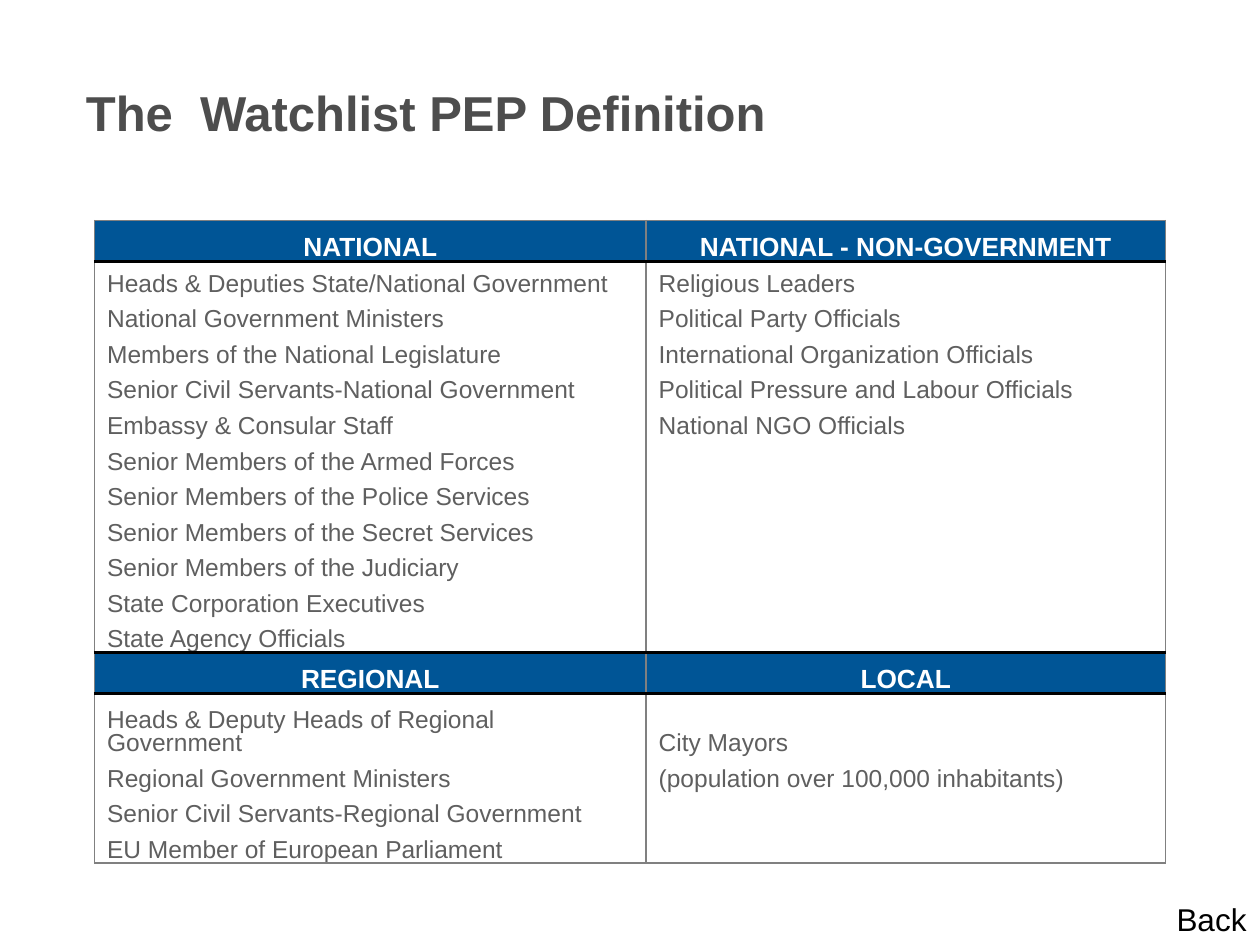
import pptx
import pptx.util
import pptx.dml.color
import pptx.enum.text
import pptx.oxml.ns
from dataclasses import dataclass
from lxml import etree

Pt = pptx.util.Pt
qn = pptx.oxml.ns.qn
ALIGN = pptx.enum.text.PP_ALIGN
ANCHOR = pptx.enum.text.MSO_ANCHOR


@dataclass(frozen=True)
class Theme:
    font: str = "Arial"
    title: str = "4D4D4D"
    header: str = "005596"
    header_text: str = "FFFFFF"
    body: str = "5F5F5F"
    grid: str = "808080"
    rule: str = "000000"
    title_size: int = 28
    header_size: int = 15
    body_size: int = 14
    back_size: int = 18


T = Theme()

# Each section: two headings, then the entries of its two columns
SECTIONS = [
    (("NATIONAL", "NATIONAL - NON-GOVERNMENT"),
     ["Heads & Deputies State/National Government",
      "National Government Ministers",
      "Members of the National Legislature",
      "Senior Civil Servants-National Government",
      "Embassy & Consular Staff",
      "Senior Members of the Armed Forces",
      "Senior Members of the Police Services",
      "Senior Members of the Secret Services",
      "Senior Members of the Judiciary",
      "State Corporation Executives",
      "State Agency Officials"],
     ["Religious Leaders",
      "Political Party Officials",
      "International Organization Officials",
      "Political Pressure and Labour Officials",
      "National NGO Officials"]),
    (("REGIONAL", "LOCAL"),
     ["Heads & Deputy Heads of Regional Government",
      "Regional Government Ministers",
      "Senior Civil Servants-Regional Government",
      "EU Member of European Parliament"],
     ["City Mayors",
      "(population over 100,000 inhabitants)"]),
]
COLUMNS = (315.2, 296.8)
HEADER_H, ROW_H, TWO_LINE_H = 23.5, 20.3, 36
TWO_LINE_ENTRY = "Heads & Deputy Heads of Regional Government"
NO_STYLE = "{2D5ABB26-0587-4C30-8999-92F81FD0307C}"


def add_run(p, text, size, color, bold=False):
    r = p.add_run()
    r.text = text
    r.font.name = T.font
    r.font.size = Pt(size)
    r.font.bold = bold
    r.font.color.rgb = pptx.dml.color.RGBColor.from_string(color)


def add_label(s, box, text, size, color, bold=False, wrap=True,
              anchor=ANCHOR.TOP, spacing=None):
    tf = s.shapes.add_textbox(*map(Pt, box)).text_frame
    tf.word_wrap = wrap
    tf.vertical_anchor = anchor
    p = tf.paragraphs[0]
    p.line_spacing = spacing
    add_run(p, text, size, color, bold)


def set_borders(cell, top, bottom):
    """Draw the four edges; top and bottom are (color, width) or None."""
    side = (T.grid, 1)
    edges = {"lnL": side, "lnR": side, "lnT": top, "lnB": bottom}
    tc_pr = cell._tc.get_or_add_tcPr()
    for i, (tag, edge) in enumerate(edges.items()):
        ln = etree.Element(qn(f"a:{tag}"))
        if edge:
            color, width = edge
            ln.set("w", str(int(Pt(width))))
            fill = etree.SubElement(ln, qn("a:solidFill"))
            etree.SubElement(fill, qn("a:srgbClr"), val=color)
        else:
            etree.SubElement(ln, qn("a:noFill"))
        tc_pr.insert(i, ln)


def fill_cell(cell, text, is_header, top, bottom):
    cell.margin_left = cell.margin_right = Pt(7.2)
    cell.margin_top = cell.margin_bottom = 0
    cell.vertical_anchor = ANCHOR.BOTTOM
    if is_header:
        cell.fill.solid()
        cell.fill.fore_color.rgb = pptx.dml.color.RGBColor.from_string(T.header)
    else:
        cell.fill.background()
    set_borders(cell, top, bottom)

    p = cell.text_frame.paragraphs[0]
    p.alignment = ALIGN.CENTER if is_header else ALIGN.LEFT
    p.line_spacing = 0.85
    after = etree.SubElement(p._p.get_or_add_pPr(), qn("a:spcAft"))
    etree.SubElement(after, qn("a:spcPct"), val="35000")
    if is_header:
        add_run(p, text, T.header_size, T.header_text, True)
    elif text:
        add_run(p, text, T.body_size, T.body)
    else:
        # Keep an empty cell from stretching its row
        etree.SubElement(p._p, qn("a:endParaRPr"), sz=str(T.body_size * 100))


def table_rows():
    """List (is_header, left text, right text) from top to bottom."""
    rows = []
    for heads, left, right in SECTIONS:
        rows.append((True, *heads))
        padded = right + [""] * (len(left) - len(right))
        rows += [(False, a, b) for a, b in zip(left, padded)]
    return rows


def add_definition_table(s, box):
    rows = table_rows()
    frame = s.shapes.add_table(len(rows), len(COLUMNS), *map(Pt, box))
    table = frame.table
    table.first_row = table.horz_banding = False
    table._tbl.tblPr.find(qn("a:tableStyleId")).text = NO_STYLE
    for column, width in zip(table.columns, COLUMNS):
        column.width = Pt(width)

    # Outer edges are thin; a heavy rule sits wherever a header meets entries
    edges = [(T.grid, 1)]
    for above, below in zip(rows, rows[1:]):
        edges.append((T.rule, 2.25) if above[0] or below[0] else None)
    edges.append((T.grid, 1))

    for i, (is_header, *texts) in enumerate(rows):
        height = HEADER_H if is_header else ROW_H
        if TWO_LINE_ENTRY in texts:
            height = TWO_LINE_H
        table.rows[i].height = Pt(height)
        for j, text in enumerate(texts):
            fill_cell(table.cell(i, j), text, is_header, edges[i], edges[i + 1])


def main():
    prs = pptx.Presentation()
    prs.slide_width, prs.slide_height = Pt(720), Pt(540)
    s = prs.slides.add_slide(prs.slide_layouts[6])

    # Title
    add_label(s, (42, 48, 663, 36), "The  Watchlist PEP Definition",
              T.title_size, T.title, bold=True, anchor=ANCHOR.BOTTOM,
              spacing=0.8)
    # Definition table
    add_definition_table(s, (54, 126, 612, 366))
    # Back label
    add_label(s, (665.2, 511, 54.8, 29), "Back", T.back_size, T.rule,
              wrap=False)

    prs.save("out.pptx")


if __name__ == "__main__":
    main()
